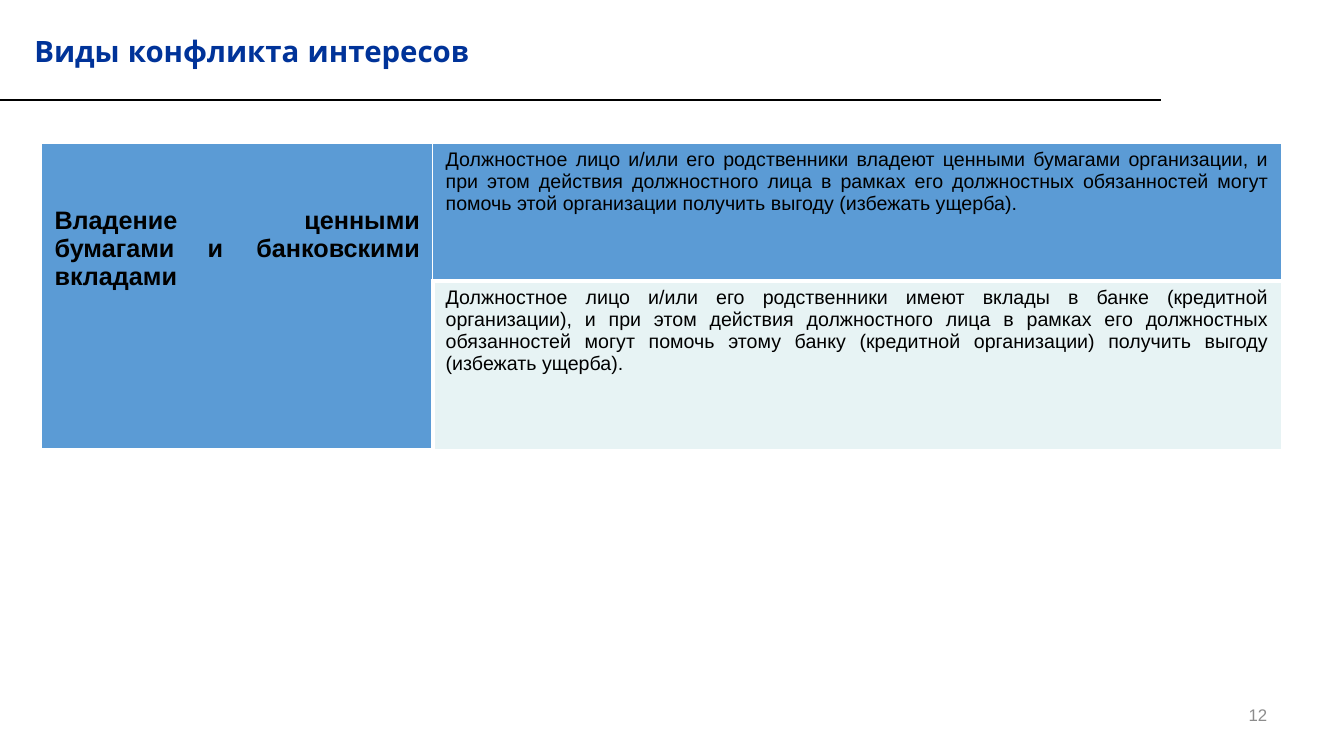
from pptx import Presentation
from pptx.dml.color import RGBColor
from pptx.enum.shapes import MSO_CONNECTOR as Connector
from pptx.enum.text import MSO_ANCHOR as Anchor, PP_ALIGN as Align
from pptx.oxml.ns import qn
from pptx.util import Pt
from lxml.etree import SubElement

BLUE, PALE, WHITE, BLACK = "5B9BD5", "E7F3F4", "FFFFFF", "000000"
TOPIC = "Владение ценными бумагами и банковскими вкладами"
SECURITIES = (
    "Должностное лицо и/или его родственники владеют ценными бумагами организации, "
    "и при этом действия должностного лица в рамках его должностных обязанностей "
    "могут помочь этой организации получить выгоду (избежать ущерба)."
)
DEPOSITS = (
    "Должностное лицо и/или его родственники имеют вклады в банке (кредитной "
    "организации), и при этом действия должностного лица в рамках его должностных "
    "обязанностей могут помочь этому банку (кредитной организации) получить выгоду "
    "(избежать ущерба)."
)


def paint(color_format, value):
    """Set a colour from a hex string."""
    color_format.rgb = RGBColor.from_string(value)


def write(frame, text, size, color, align, bold=False, font="Arial"):
    """Put one formatted run into the first paragraph of a text frame."""
    frame.word_wrap = True
    paragraph = frame.paragraphs[0]
    paragraph.alignment = align
    run = paragraph.add_run()
    run.text = text
    run.font.size, run.font.bold, run.font.name = Pt(size), bold, font
    paint(run.font.color, color)
    return paragraph


def add_title(slide, text):
    """Move and format the title placeholder."""
    title = slide.shapes.title
    title.left, title.top, title.width, title.height = Pt(17.3), Pt(18), Pt(564.5), Pt(40.3)
    title.text_frame.vertical_anchor = Anchor.MIDDLE
    heading = write(title.text_frame, text, 21, "003399", Align.JUSTIFY, True, "Quicksand")
    heading.line_spacing = 0.9


def add_rule(slide):
    """Draw the line below the title."""
    rule = slide.shapes.add_connector(Connector.STRAIGHT, 0, Pt(71.3), Pt(829.4), Pt(71.3))
    paint(rule.line.color, BLACK)
    rule.line.width = Pt(1.5)
    SubElement(rule._element.spPr, qn("a:effectLst"))


def add_page_number(slide, number):
    """Write the page number at the lower right."""
    box = slide.shapes.add_textbox(Pt(688.3), Pt(491.8), Pt(223.9), Pt(37.4))
    box.text_frame.vertical_anchor = Anchor.MIDDLE
    write(box.text_frame, number, 12, "8C8C8C", Align.RIGHT)


def style_cell(cell, fill, left=1, right=1, top=1, bottom=1):
    """Give a cell white borders, inner margins and a fill."""
    properties = cell._tc.get_or_add_tcPr()
    for side, width in zip("LRTB", (left, right, top, bottom)):
        border = SubElement(properties, qn(f"a:ln{side}"), w=str(Pt(width)))
        solid = SubElement(border, qn("a:solidFill"))
        SubElement(solid, qn("a:srgbClr"), val=WHITE)
    cell.margin_left = cell.margin_right = Pt(9.2)
    cell.margin_top = cell.margin_bottom = Pt(3.6)
    cell.fill.solid()
    paint(cell.fill.fore_color, fill)


def add_conflict_table(slide):
    """Build the table with the topic on the left and its cases on the right."""
    table = slide.shapes.add_table(2, 2, Pt(29.8), Pt(102.3), Pt(885.6), Pt(218.9)).table
    for column, width in zip(table.columns, (279.4, 606.2)):
        column.width = Pt(width)
    for row, height in zip(table.rows, (98.6, 120.3)):
        row.height = Pt(height)

    topic, securities = table.cell(0, 0), table.cell(0, 1)
    covered, deposits = table.cell(1, 0), table.cell(1, 1)
    style_cell(topic, BLUE, bottom=3)
    style_cell(covered, BLUE, bottom=3)
    style_cell(securities, BLUE, bottom=3)
    style_cell(deposits, PALE, left=3, top=3)
    topic.merge(covered)
    topic.margin_top = Pt(45)

    write(topic.text_frame, TOPIC, 18, BLACK, Align.JUSTIFY, True)
    for case, text in ((securities, SECURITIES), (deposits, DEPOSITS)):
        write(case.text_frame, text, 14, BLACK, Align.JUSTIFY)


def main():
    """Build and save the slide."""
    deck = Presentation()
    deck.slide_width, deck.slide_height = Pt(960), Pt(540)
    slide = deck.slides.add_slide(deck.slide_layouts[5])
    add_page_number(slide, "12")
    add_rule(slide)
    add_title(slide, "Виды конфликта интересов")
    add_conflict_table(slide)
    deck.save("out.pptx")


if __name__ == "__main__":
    main()
